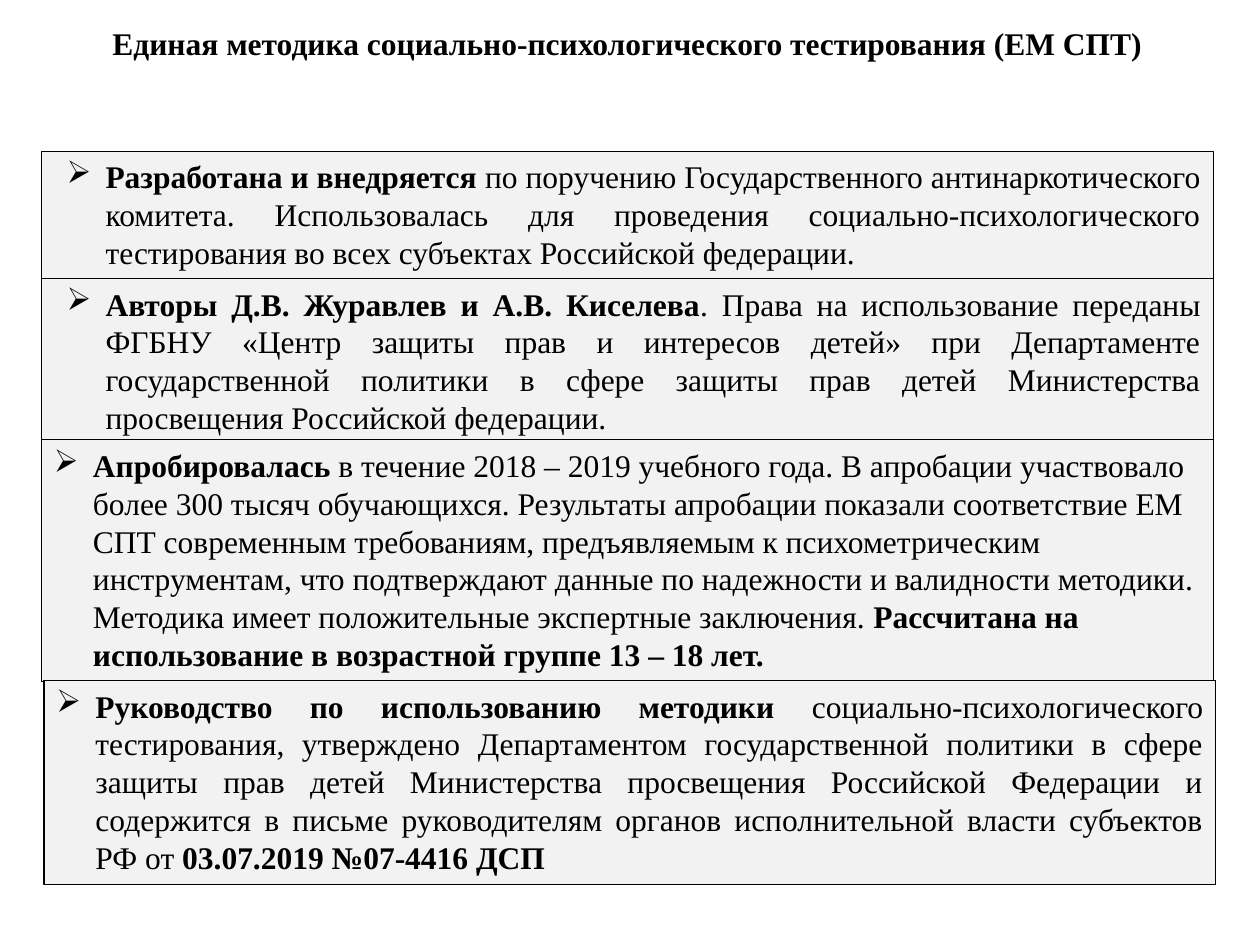
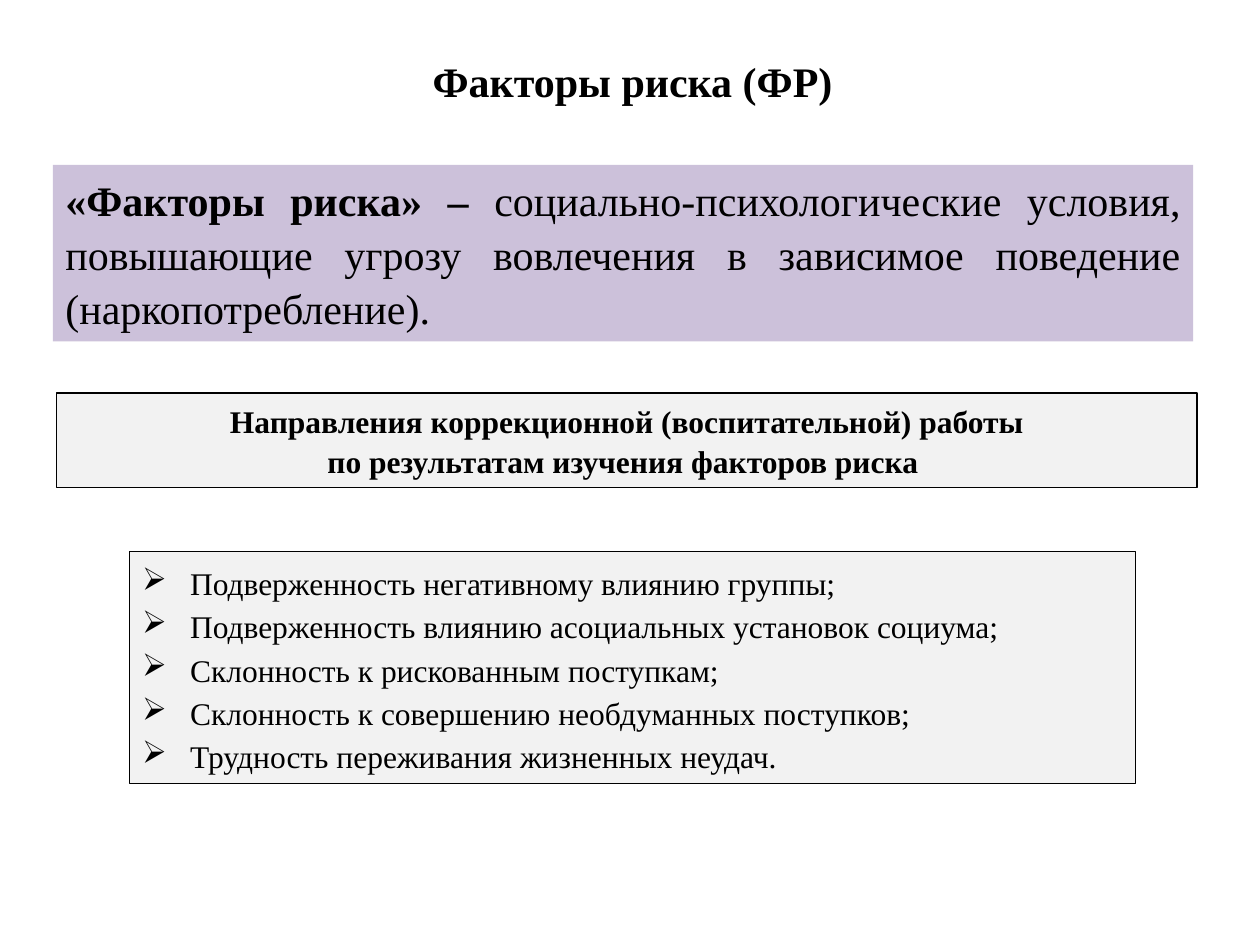
from lxml.etree import SubElement
from pptx import Presentation
from pptx.dml.color import RGBColor
from pptx.enum.shapes import MSO_SHAPE as Shape
from pptx.enum.text import MSO_ANCHOR as Anchor, MSO_AUTO_SIZE as AutoSize, PP_ALIGN as Align
from pptx.oxml.ns import qn
from pptx.util import Pt

PX = 9144  # EMU per px, 100 px to the inch
FONT = "Times New Roman"
BLACK, WHITE, GREY, LILAC = "000000", "FFFFFF", "F2F2F2", "CCC1DA"
BULLET = "➢"


def color(hex_code):
    return RGBColor.from_string(hex_code)


class Deck:
    """Shared style and the current slide."""

    def __init__(self, width, height):
        self.prs = Presentation()
        self.prs.slide_width, self.prs.slide_height = width * PX, height * PX
        self.slide = None

    def new_slide(self):
        self.slide = self.prs.slides.add_slide(self.prs.slide_layouts[6])
        self.slide.background.fill.solid()
        self.slide.background.fill.fore_color.rgb = color(WHITE)

    def panel(self, box, paragraphs, size=18, fill=GREY, border=True,
              align=Align.JUSTIFY, spacing=None, indent=None, hang=31):
        """Filled rectangle with text; **...** marks bold, an indent adds bullets."""
        panel = self.slide.shapes.add_shape(Shape.RECTANGLE, *(v * PX for v in box))
        panel.shadow.inherit = False
        panel.fill.solid()
        panel.fill.fore_color.rgb = color(fill)
        if border:
            panel.line.color.rgb = color(BLACK)
            panel.line.width = Pt(0.75)
        else:
            panel.line.fill.background()

        frame = panel.text_frame
        frame.word_wrap = True
        frame.auto_size = AutoSize.SHAPE_TO_FIT_TEXT
        frame.vertical_anchor = Anchor.TOP
        for i, text in enumerate(paragraphs):
            paragraph = frame.paragraphs[0] if i == 0 else frame.add_paragraph()
            paragraph.alignment = align
            if spacing:
                paragraph.line_spacing = spacing
            self.fill_runs(paragraph, text, size)
            if indent:
                self.bullet(paragraph, indent, hang)

    def fill_runs(self, paragraph, text, size):
        for i, part in enumerate(text.split("**")):
            if part:
                run = paragraph.add_run()
                run.text = part
                run.font.name, run.font.size = FONT, Pt(size)
                run.font.bold = i % 2 == 1
                run.font.color.rgb = color(BLACK)

    def bullet(self, paragraph, indent, hang):
        props = paragraph._p.get_or_add_pPr()
        props.set("marL", str(indent * PX))
        props.set("indent", str(-hang * PX))
        SubElement(props, qn("a:buChar")).set("char", BULLET)

    def title(self, box, text, size):
        self.panel(box, [f"**{text}**"], size, WHITE, border=False, align=Align.CENTER)


def build_method_slide(deck):
    deck.new_slide()
    deck.title((66, 14, 864, 40),
               "Единая методика социально-психологического тестирования (ЕМ СПТ)", 18)

    # Facts about the method: left, top, height, indent, alignment, text
    facts = [
        (33, 120, 101, 41, Align.JUSTIFY,
         "**Разработана и внедряется **по поручению Государственного антинаркотического "
         "комитета. Использовалась для проведения социально-психологического "
         "тестирования во всех субъектах Российской федерации."),
        (33, 221, 131, 41, Align.JUSTIFY,
         "**Авторы Д.В. Журавлев и А.В. Киселева**. Права на использование переданы "
         "ФГБНУ «Центр защиты прав и интересов детей» при Департаменте государственной "
         "политики в сфере защиты прав детей Министерства просвещения Российской федерации."),
        (33, 349, 192, 31, Align.LEFT,
         "**Апробировалась **в течение 2018 – 2019 учебного года. В апробации участвовало "
         "более 300 тысяч обучающихся. Результаты апробации показали соответствие ЕМ СПТ "
         "современным требованиям, предъявляемым к психометрическим инструментам, что "
         "подтверждают данные по надежности и валидности методики. Методика имеет "
         "положительные экспертные заключения. "
         "**Рассчитана на использование в возрастной группе 13 – 18 лет.**"),
        (35, 540, 162, 31, Align.JUSTIFY,
         "**Руководство по использованию методики **социально-психологического "
         "тестирования, утверждено Департаментом государственной политики в сфере защиты "
         "прав детей Министерства просвещения Российской Федерации и содержится в письме "
         "руководителям органов исполнительной власти субъектов РФ от "
         "**03.07.2019 №07-4416 ДСП**"),
    ]
    for left, top, height, indent, align, text in facts:
        deck.panel((left, top, 930, height), [text], align=align, indent=indent)


def build_risk_slide(deck):
    deck.new_slide()
    deck.title((70, 39, 864, 50), "Факторы риска (ФР)", 24)

    # Definition
    deck.panel((42, 131, 905, 140),
               ["**«Факторы риска» –** социально-психологические условия, повышающие "
                "угрозу вовлечения в зависимое поведение (наркопотребление)."],
               size=24, fill=LILAC, border=False, spacing=1.07)

    # Heading of the list
    deck.panel((45, 312, 905, 75),
               ["**Направления коррекционной (воспитательной) работы**",
                "**по результатам изучения факторов риска **"],
               align=Align.CENTER, spacing=1.07)

    # Directions of work
    directions = [
        "Подверженность негативному влиянию группы;",
        "Подверженность влиянию асоциальных установок социума;",
        "Склонность к рискованным поступкам;",
        "Склонность к совершению необдуманных поступков;",
        "Трудность переживания жизненных неудач.",
    ]
    deck.panel((103, 438, 798, 184), directions, spacing=1.15, indent=38, hang=38)


def main():
    deck = Deck(1000, 750)
    build_method_slide(deck)
    build_risk_slide(deck)
    deck.prs.save("out.pptx")


if __name__ == "__main__":
    main()
